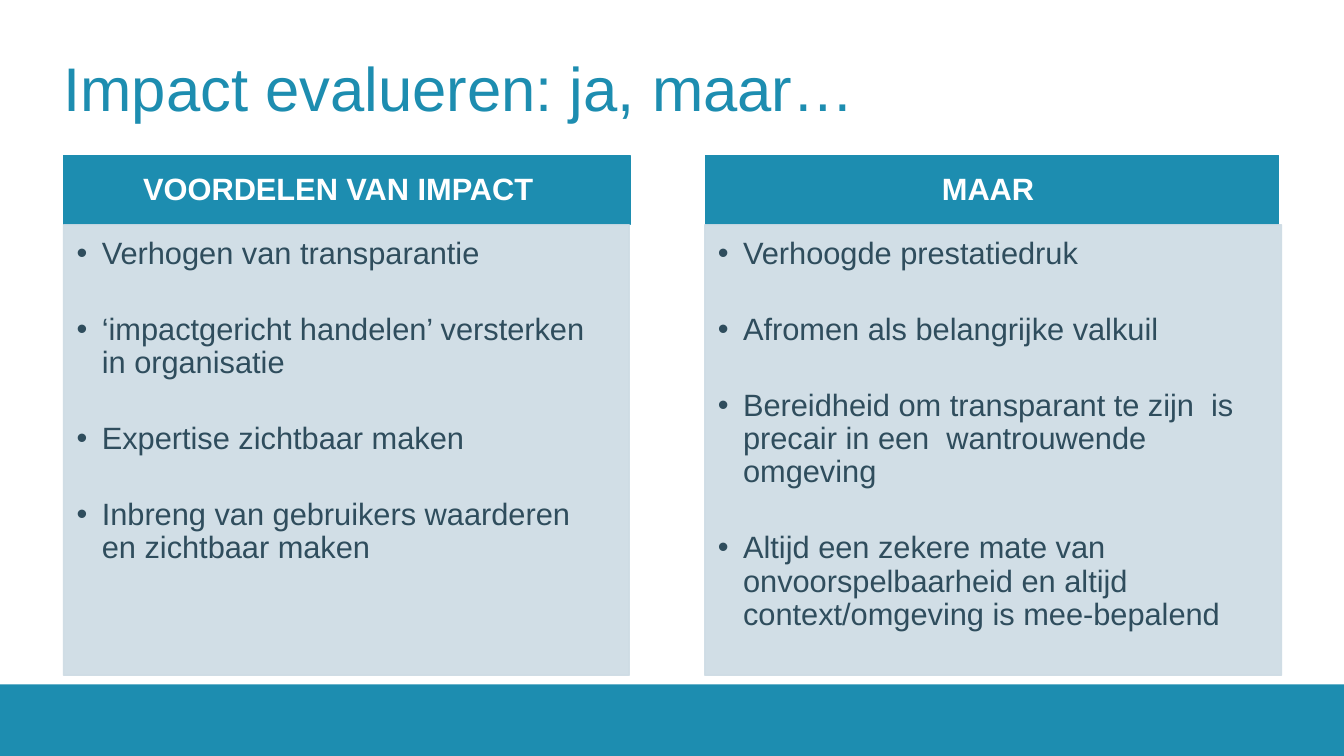
from pptx import Presentation as Deck
from pptx.util import Inches as In, Pt
from pptx.dml.color import RGBColor as Rgb
from pptx.enum.shapes import MSO_SHAPE as Shape
from pptx.enum.text import PP_ALIGN as Align, MSO_ANCHOR as Anchor
from pptx.oxml.ns import qn
from lxml.etree import SubElement as Sub

HUES = {"teal": "1D8DB0", "pale": "CDDBE4", "ink": "2F4D5D", "white": "FFFFFF"}
FONT = "Arial"
TOP, HEAD, BODY = 1.54, 0.69, 4.47

COLS = [
    {
        "head": "VOORDELEN VAN IMPACT", "bar": (0.63, 5.62), "box": (0.63, 5.61),
        "right": 0.34,
        "items": [
            "Verhogen van transparantie",
            "‘impactgericht handelen’ versterken in organisatie",
            "Expertise zichtbaar maken",
            "Inbreng van gebruikers waarderen en zichtbaar maken",
        ],
    },
    {
        "head": "MAAR", "bar": (7, 5.68), "box": (6.99, 5.72),
        "right": 0.25,
        "items": [
            "Verhoogde prestatiedruk",
            "Afromen als belangrijke valkuil",
            "Bereidheid om transparant te zijn  is precair in een  wantrouwende omgeving",
            "Altijd een zekere mate van onvoorspelbaarheid en altijd "
            "context/omgeving is mee-bepalend",
        ],
    },
]


class Page:
    """Holds the style and the current slide, and draws each kind of element."""

    def __init__(self, deck):
        self.slide = deck.slides.add_slide(deck.slide_layouts[6])

    def rect(self, x, y, w, h, hue, alpha=None, edge=True):
        box = self.slide.shapes.add_shape(Shape.RECTANGLE, In(x), In(y), In(w), In(h))
        box.shadow.inherit = False
        box.fill.solid()
        box.fill.fore_color.rgb = Rgb.from_string(HUES[hue])
        if edge:
            box.line.color.rgb = Rgb.from_string(HUES[hue])
            box.line.width = Pt(1)
        else:
            box.line.fill.background()
        if alpha:
            for node in box._element.spPr.iter(qn("a:srgbClr")):
                Sub(node, qn("a:alpha"), val=str(alpha * 1000))
        return box

    def frame(self, box, pads, anchor):
        text = box.text_frame
        text.word_wrap = True
        text.vertical_anchor = anchor
        (text.margin_left, text.margin_top,
         text.margin_right, text.margin_bottom) = [In(pad) for pad in pads]
        return text

    def style(self, para, size, hue, bold=False):
        for run in para.runs:
            run.font.name = FONT
            run.font.size = Pt(size)
            run.font.bold = bold
            run.font.color.rgb = Rgb.from_string(HUES[hue])

    def title(self, words):
        box = self.slide.shapes.add_textbox(In(0.63), In(0.23), In(12.07), In(1.26))
        text = self.frame(box, (0, 0, 0, 0), Anchor.MIDDLE)
        text.text = words
        self.style(text.paragraphs[0], 44, "teal")

    def header(self, x, w, words, right):
        box = self.rect(x, TOP, w, HEAD, "teal")
        text = self.frame(box, (0.17, 0.1, right, 0.1), Anchor.MIDDLE)
        text.text = words
        para = text.paragraphs[0]
        para.alignment = Align.CENTER
        para.line_spacing = 0.9
        self.style(para, 22, "white", True)

    def panel(self, x, w, items):
        box = self.rect(x, TOP + HEAD, w, BODY, "pale", 90)
        text = self.frame(box, (0.13, 0.13, 0.17, 0.19), Anchor.TOP)
        text.text = "\n".join(items)
        for para in text.paragraphs:
            para.alignment = Align.LEFT
            para.line_spacing = 0.9
            para.space_after = Pt(30.5)
            prop = para._p.get_or_add_pPr()
            prop.set("marL", str(In(0.25)))
            prop.set("indent", str(In(-0.25)))
            Sub(prop, qn("a:buFont"), typeface=FONT)
            Sub(prop, qn("a:buChar"), char="•")
            self.style(para, 22, "ink")


def main():
    deck = Deck()
    deck.slide_width, deck.slide_height = In(13.33), In(7.5)
    page = Page(deck)
    page.rect(0, 6.79, 13.33, 0.71, "teal", edge=False)
    for col in COLS:
        page.header(*col["bar"], col["head"], col["right"])
        page.panel(*col["box"], col["items"])
    page.title("Impact evalueren: ja, maar…")
    deck.save("out.pptx")


if __name__ == "__main__":
    main()
